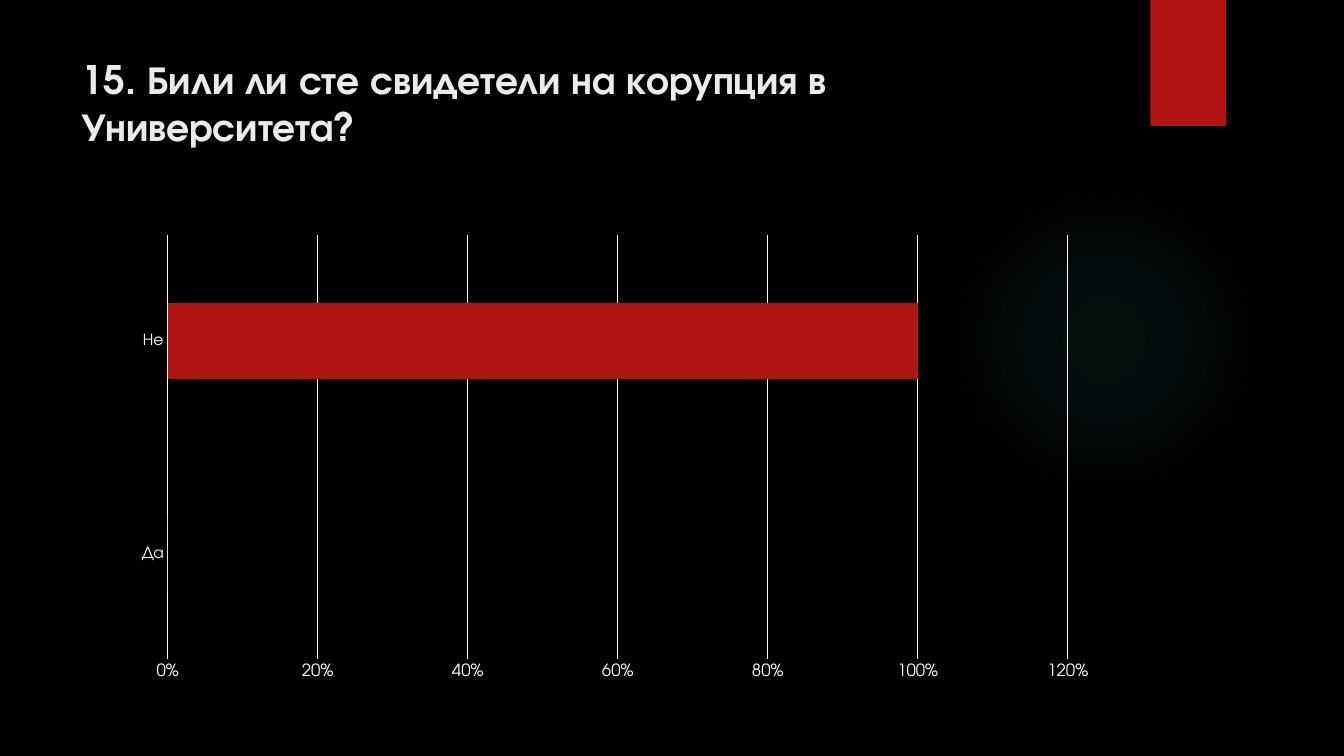
from dataclasses import dataclass

from lxml import etree
from pptx import Presentation
from pptx.chart.data import CategoryChartData
from pptx.dml.color import RGBColor
from pptx.enum.chart import XL_CHART_TYPE, XL_TICK_MARK
from pptx.enum.shapes import MSO_SHAPE
from pptx.enum.text import MSO_ANCHOR, PP_ALIGN
from pptx.oxml import parse_xml
from pptx.oxml.ns import nsdecls, qn
from pptx.util import Inches, Pt

SLIDE_WIDTH, SLIDE_HEIGHT = Inches(13.33), Inches(7.5)
FONT = "TeX Gyre Adventor"
BLACK = RGBColor(0x00, 0x00, 0x00)
WHITE = RGBColor(0xFF, 0xFF, 0xFF)
PALE = RGBColor(0xEB, 0xEB, 0xEB)
RED = RGBColor(0xB0, 0x15, 0x13)
TEAL = RGBColor(0x50, 0xB9, 0xC1)
BAR_CLUSTERED = XL_CHART_TYPE.BAR_CLUSTERED
NO_TICK = XL_TICK_MARK.NONE
RECTANGLE, OVAL = MSO_SHAPE.RECTANGLE, MSO_SHAPE.OVAL
TOP, LEFT = MSO_ANCHOR.TOP, PP_ALIGN.LEFT
TITLE_ONLY = 5


@dataclass(frozen=True)
class Area:
    """A rectangle in percent of the slide's width and height."""
    left: float
    top: float
    width: float
    height: float

    def lengths(self) -> tuple[int, int, int, int]:
        return (int(SLIDE_WIDTH * self.left / 100),
                int(SLIDE_HEIGHT * self.top / 100),
                int(SLIDE_WIDTH * self.width / 100),
                int(SLIDE_HEIGHT * self.height / 100))


@dataclass(frozen=True)
class Decoration:
    preset: MSO_SHAPE
    area: Area
    color: RGBColor
    fade: tuple[tuple[int, int], ...] = ()  # position and opacity, in percent


DECORATIONS = (
    Decoration(OVAL, Area(70.59, 24.4, 23.11, 41.07), TEAL,
               ((0, 7), (36, 6), (69, 0))),
    Decoration(RECTANGLE, Area(85.6, 0, 5.63, 16.67), RED),
)
TITLE_AREA = Area(5.33, 6.67, 77.19, 20.4)
CHART_AREA = Area(9.08, 29.87, 73.37, 61.2)
TITLE = "15. Били ли сте свидетели на корупция в Университета?"
ANSWERS = {"Да": 0, "Не": 1}


def radial_fill(color: RGBColor, fade: tuple[tuple[int, int], ...]) -> etree.ElementBase:
    stops = "".join(
        f'<a:gs pos="{position * 1000}"><a:srgbClr val="{color}">'
        f'<a:alpha val="{opacity * 1000}"/></a:srgbClr></a:gs>'
        for position, opacity in fade)
    return parse_xml(
        f'<a:gradFill {nsdecls("a")} rotWithShape="1"><a:gsLst>{stops}</a:gsLst>'
        '<a:path path="circle"><a:fillToRect l="50000" t="50000" r="50000" b="50000"/>'
        '</a:path></a:gradFill>')


def add_decoration(page, decoration: Decoration) -> None:
    shape = page.shapes.add_shape(decoration.preset, *decoration.area.lengths())
    shape.shadow.inherit = False
    shape.line.fill.background()
    if decoration.fade:
        geometry = shape.element.spPr.find(qn("a:prstGeom"))
        geometry.addnext(radial_fill(decoration.color, decoration.fade))
    else:
        shape.fill.solid()
        shape.fill.fore_color.rgb = decoration.color


def write_title(page) -> None:
    title = page.shapes.title
    title.left, title.top, title.width, title.height = TITLE_AREA.lengths()
    frame = title.text_frame
    frame.word_wrap = True
    frame.vertical_anchor = TOP
    para = frame.paragraphs[0]
    para.alignment = LEFT
    para.line_spacing = 1.0
    span = para.add_run()
    span.text = TITLE
    style_font(span.font, 28, PALE)
    span.font.bold = True
    page.shapes.element.append(title.element)


def style_font(font, size: int, color: RGBColor) -> None:
    font.name = FONT
    font.size = Pt(size)
    font.color.rgb = color


def style_line(line) -> None:
    line.color.rgb = WHITE
    line.width = Pt(0.75)


def add_answer_chart(page) -> None:
    data = CategoryChartData(number_format="0%")
    data.categories = list(ANSWERS)
    data.add_series("Series 1", list(ANSWERS.values()))
    chart = page.shapes.add_chart(BAR_CLUSTERED, *CHART_AREA.lengths(), data).chart
    chart.has_legend = False
    chart.has_title = False
    style_font(chart.font, 10, WHITE)

    plot = chart.plots[0]
    plot.gap_width = 182
    plot.vary_by_categories = False
    bars = plot.series[0].format.fill
    bars.solid()
    bars.fore_color.rgb = RED

    for axis in (chart.category_axis, chart.value_axis):
        axis.major_tick_mark = axis.minor_tick_mark = NO_TICK
        style_font(axis.tick_labels.font, 12, WHITE)
    chart.category_axis.has_major_gridlines = False
    style_line(chart.category_axis.format.line)

    values = chart.value_axis
    values.minimum_scale, values.maximum_scale, values.major_unit = 0, 1.2, 0.2
    values.tick_labels.number_format = "0%"
    values.tick_labels.number_format_is_linked = False
    values.format.line.fill.background()
    values.has_major_gridlines = True
    style_line(values.major_gridlines.format.line)


def main() -> None:
    deck = Presentation()
    deck.slide_width, deck.slide_height = SLIDE_WIDTH, SLIDE_HEIGHT
    page = deck.slides.add_slide(deck.slide_layouts[TITLE_ONLY])
    page.background.fill.solid()
    page.background.fill.fore_color.rgb = BLACK
    for decoration in DECORATIONS:
        add_decoration(page, decoration)
    write_title(page)
    add_answer_chart(page)
    deck.save("out.pptx")


if __name__ == "__main__":
    main()
